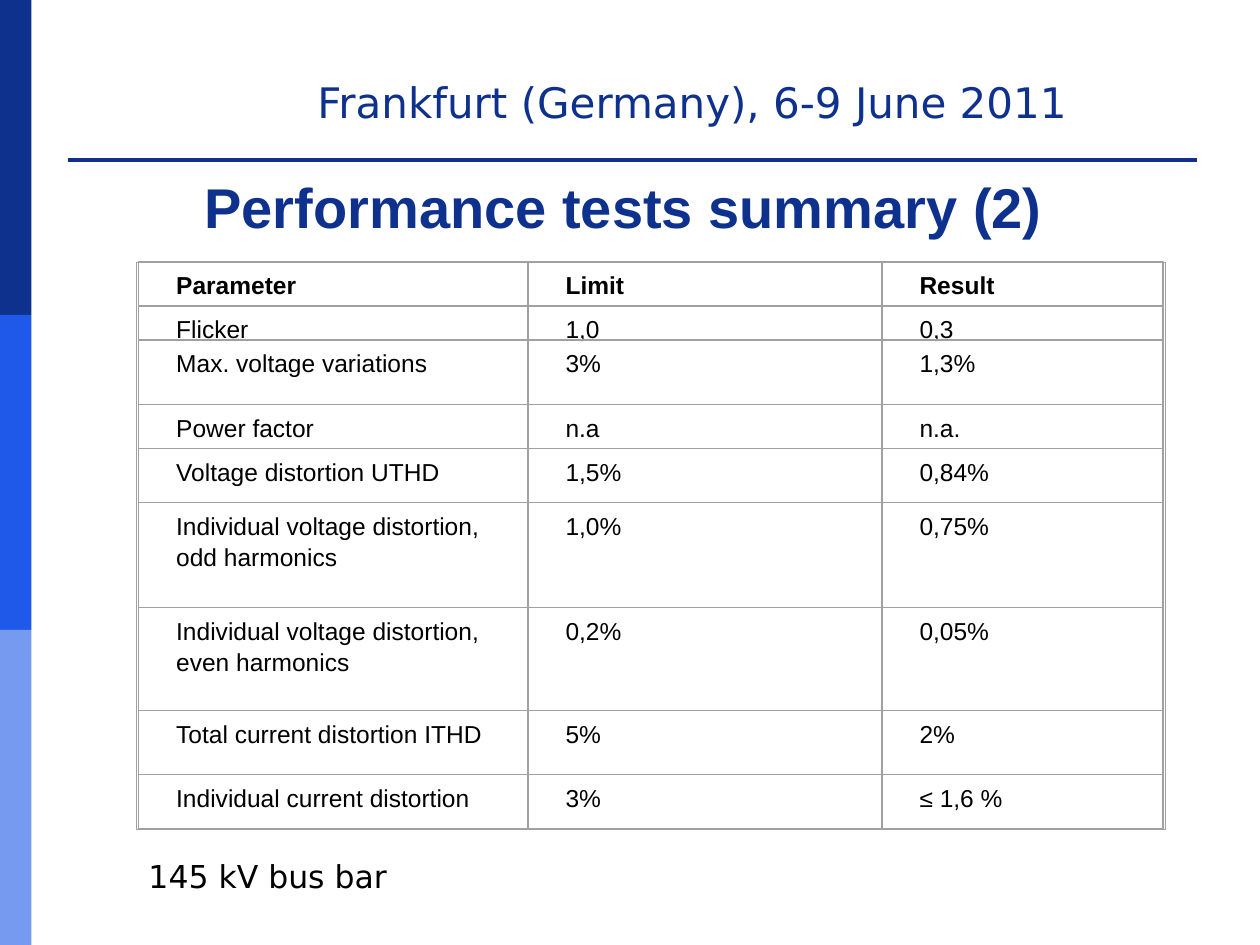
"""Build the slide with the second summary table of performance tests."""
from itertools import pairwise

from lxml.etree import SubElement
from pptx import Presentation
from pptx.dml.color import RGBColor
from pptx.enum.shapes import MSO_SHAPE
from pptx.enum.text import MSO_ANCHOR, PP_ALIGN
from pptx.oxml.ns import qn
from pptx.util import Inches, Pt

W, H = 10, 7.5
NAVY, GREY, BLACK = "0E318D", "A0A0A0", "000000"
BARS = [NAVY, "1F59E9", "779AF1"]
ROWS = [
    ("Parameter", "Limit", "Result"),
    ("Flicker", "1,0", "0,3"),
    ("Max. voltage variations", "3%", "1,3%"),
    ("Power factor", "n.a", "n.a."),
    ("Voltage distortion UTHD", "1,5%", "0,84%"),
    ("Individual voltage distortion, odd harmonics", "1,0%", "0,75%"),
    ("Individual voltage distortion, even harmonics", "0,2%", "0,05%"),
    ("Total current distortion ITHD", "5%", "2%"),
    ("Individual current distortion", "3%", "≤ 1,6 %"),
]
COL_EDGES = [1.1, 4.19, 7, 9.23]
ROW_EDGES = [2.08, 2.43, 2.7, 3.21, 3.56, 3.99, 4.82, 5.64, 6.15, 6.58]
FRAME_GAP, CELL_PAD = 0.02, 0.2


def rgb(color):
    return RGBColor.from_string(color)


def add_text(shapes, box, text, size=14, font="Arial", color=BLACK, bold=False,
             align=PP_ALIGN.LEFT, anchor=MSO_ANCHOR.TOP, wrap=True, spacing=None):
    tf = shapes.add_textbox(*map(Inches, box)).text_frame
    tf.word_wrap = wrap
    tf.vertical_anchor = anchor
    p = tf.paragraphs[0]
    p.alignment = align
    p.line_spacing = spacing
    r = p.add_run()
    r.text = text
    r.font.size, r.font.name, r.font.bold = Pt(size), font, bold
    r.font.color.rgb = rgb(color)


def add_rect(shapes, box, fill=None, line=None, width=0):
    sp = shapes.add_shape(MSO_SHAPE.RECTANGLE, *map(Inches, box))
    sp.shadow.inherit = False
    if fill:
        sp.fill.solid()
        sp.fill.fore_color.rgb = rgb(fill)
    else:
        sp.fill.background()
    if line:
        sp.line.color.rgb = rgb(line)
        sp.line.width = Pt(width)
    else:
        sp.line.fill.background()


def add_header_rule(s, box):
    table = s.shapes.add_table(1, 1, *map(Inches, box)).table
    table.first_row = table.horz_banding = False
    cell = table.cell(0, 0)
    cell.margin_left = cell.margin_right = cell.margin_top = cell.margin_bottom = 0
    SubElement(cell.text_frame.paragraphs[0]._p, qn("a:endParaRPr"), sz="800")
    cell.fill.background()
    tc_pr = cell._tc.get_or_add_tcPr()
    for i, side in enumerate(("lnL", "lnR", "lnT", "lnB")):
        ln = tc_pr.makeelement(qn(f"a:{side}"), {"w": str(Pt(2.25))})
        if side == "lnB":
            SubElement(SubElement(ln, qn("a:solidFill")), qn("a:srgbClr"), val=NAVY)
        else:
            SubElement(ln, qn("a:noFill"))
        tc_pr.insert(i, ln)


def add_results(s):
    shapes = s.shapes.add_group_shape().shapes
    for i, (texts, (top, bottom)) in enumerate(zip(ROWS, pairwise(ROW_EDGES))):
        for text, (left, right) in zip(texts, pairwise(COL_EDGES)):
            width, height = right - left, bottom - top
            add_text(shapes, (left + CELL_PAD, top, width - 2 * CELL_PAD, height),
                     text, bold=i == 0, spacing=1.07)
            add_rect(shapes, (left, top, width, height), line=GREY)
    left, top = COL_EDGES[0] - FRAME_GAP, ROW_EDGES[0]
    add_rect(shapes, (left, top, COL_EDGES[-1] + FRAME_GAP - left, ROW_EDGES[-1] - top),
             line=GREY, width=0.5)


def main():
    prs = Presentation()
    prs.slide_width, prs.slide_height = Inches(W), Inches(H)
    s = prs.slides.add_slide(prs.slide_layouts[6])
    bar_h = H / len(BARS)
    for i, color in enumerate(BARS):
        add_rect(s.shapes, (0, i * bar_h, W / 40, bar_h), fill=color)
    add_header_rule(s, (0.54, 1.07, 8.96, 0.2))
    add_text(s.shapes, (2.42, 0.56, 6.58, 0.5), "Frankfurt (Germany), 6-9 June 2011",
             size=24, font="DejaVu Sans", color=NAVY)
    add_text(s.shapes, (0.45, 1.31, 9, 0.65), "Performance tests summary (2)", size=32,
             color=NAVY, bold=True, align=PP_ALIGN.CENTER, anchor=MSO_ANCHOR.MIDDLE)
    add_results(s)
    add_text(s.shapes, (1.08, 6.75, 2.12, 0.4), "145 kV bus bar",
             size=18, font="DejaVu Sans", wrap=False)
    prs.save("out.pptx")


if __name__ == "__main__":
    main()
